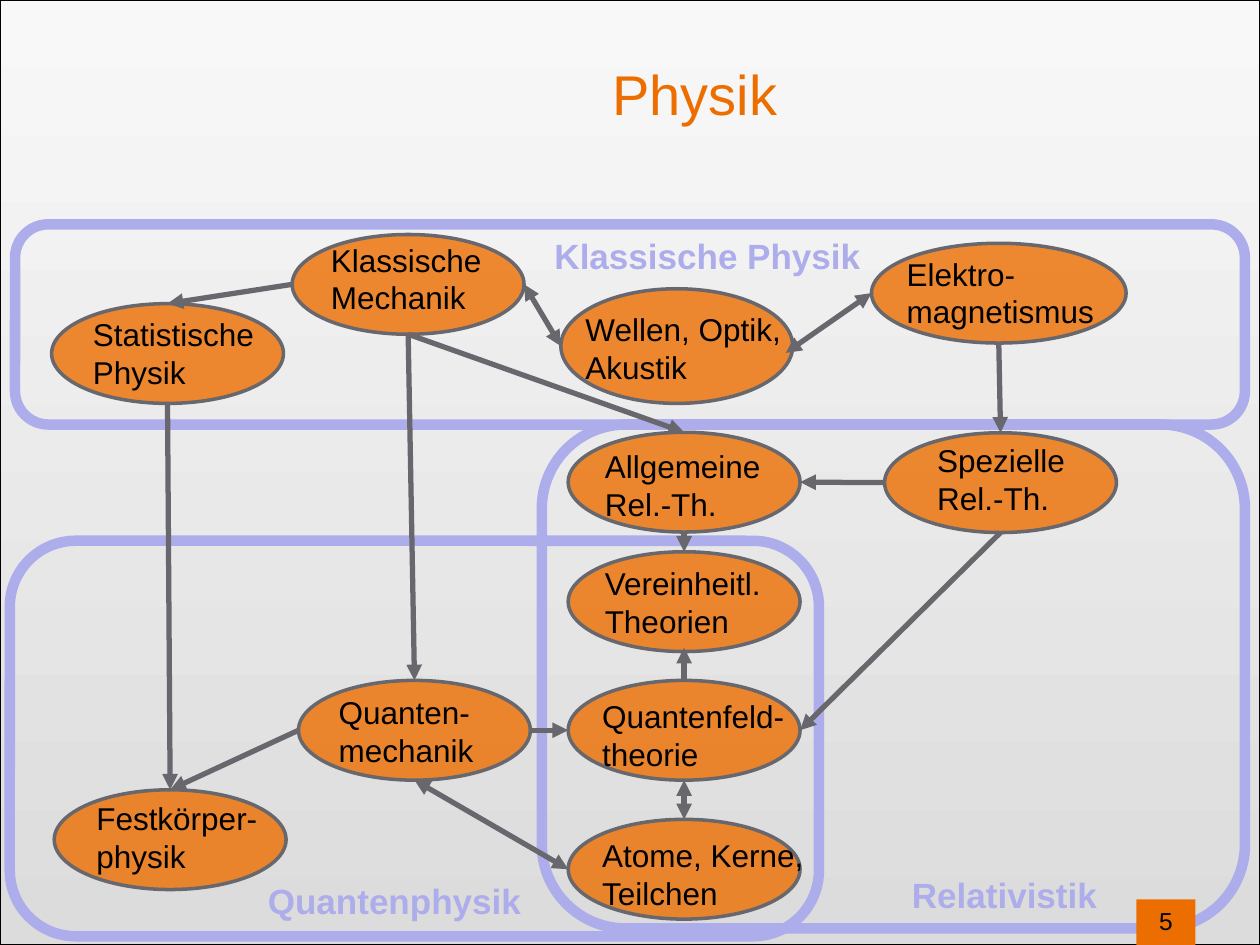
from lxml.etree import SubElement
from pptx import Presentation
from pptx.dml.color import RGBColor
from pptx.enum.shapes import MSO_CONNECTOR, MSO_SHAPE
from pptx.enum.text import MSO_ANCHOR, MSO_AUTO_SIZE, PP_ALIGN
from pptx.oxml.ns import qn
from pptx.util import Pt

COLORS = {"orange": "ED6E00", "node": "EC6E00", "gray": "68676D", "lilac": "ADADEB",
          "black": "000000", "light": "F8F8F8", "dark": "DCDCDC"}

# Where an arrow may touch a node, as shares of its width and height
SIDES = {"top": (0.5, 0), "left": (0, 0.5), "bottom": (0.5, 1), "right": (1, 0.5),
         "low": (0.5, 0.96), "corner": (0.97, 0.56)}

WIDE, HIGH = 132.5, 57
MID = 324.7  # left edge of the middle column

# Ellipse (left, top, width, height), label (left, top, width), label lines
NODES = {
    "mech": ((167, 134, WIDE, HIGH), (182, 134, 106.5), ("Klassische", "Mechanik")),
    "stat": ((29.5, 173.5, WIDE, HIGH), (46, 176.5, 112.5), ("Statistische", "Physik")),
    "wave": ((320.5, 165, WIDE, 65.5), (327.5, 173.5, 132.5), ("Wellen, Optik,", "Akustik")),
    "elec": ((498, 139, 145.5, HIGH), (511, 142, 122.5), ("Elektro-", "magnetismus")),
    "grav": ((MID, 247, WIDE, HIGH), (338.5, 252, 104.5), ("Allgemeine", "Rel.-Th.")),
    "rel": ((505.5, 247.3, WIDE, HIGH), (528.5, 248.5, 93.5), ("Spezielle", "Rel.-Th.")),
    "quant": ((170.6, 388.8, WIDE, HIGH), (186.5, 392.5, 92), ("Quanten-", "mechanik")),
    "solid": ((31, 451.3, WIDE, HIGH), (48, 453, 107.5), ("Festkörper-", "physik")),
    "union": ((MID, 315.3, WIDE, HIGH), (338.5, 319, 104.5), ("Vereinheitl.", "Theorien")),
    "field": ((MID, 388.8, WIDE, HIGH), (337, 395, 119.5), ("Quantenfeld-", "theorie")),
    "atom": ((MID, 468.2, WIDE, HIGH), (337, 474, 130.5), ("Atome, Kerne,", "Teilchen")),
}

# Start node and side, end node and side, both ends pointed
ARROWS = [
    ("stat", "bottom", "solid", "top", False),
    ("quant", "left", "solid", "top", False),
    ("mech", "left", "stat", "top", False),
    ("mech", "bottom", "quant", "top", False),
    ("mech", "right", "wave", "left", True),
    ("elec", "left", "wave", "corner", True),
    ("elec", "bottom", "rel", "top", False),
    ("mech", "bottom", "grav", "top", False),
    ("grav", "bottom", "union", "top", False),
    ("rel", "left", "grav", "right", False),
    ("rel", "bottom", "field", "right", False),
    ("field", "top", "union", "low", False),
    ("atom", "top", "field", "bottom", True),
    ("quant", "bottom", "atom", "left", True),
    ("quant", "right", "field", "left", False),
]

# Frame box, then name and its box
AREAS = [
    ((5.6, 309, 462.4, 226), "Quantenphysik", (146, 499, 160.5, 31.5)),
    ((309.6, 242.6, 401.8, 288), "Relativistik", (514, 495.5, 121, 31.5)),
    ((8.6, 128.2, 702.8, 114.4), "Klassische Physik", (309.8, 130.5, 190.5, 31.5)),
]


def color(name):
    return RGBColor.from_string(COLORS[name])


def spot(node, side):
    """Give the point where an arrow touches a node."""
    (x, y, w, h), (fx, fy) = NODES[node][0], SIDES[side]
    return Pt(x + w * fx), Pt(y + h * fy)


class Sheet:
    """The slide being drawn and its style."""
    face = "Arial"

    def __init__(self, deck):
        self.slide = deck.slides.add_slide(deck.slide_layouts[5])
        self.shapes = self.slide.shapes

    def letter(self, frame, lines, size, tone="black", bold=False, align=PP_ALIGN.LEFT):
        """Set the lines of text and their style."""
        frame.text = "\n".join(lines)
        for para in frame.paragraphs:
            para.alignment = align
            font = para.font
            font.name, font.size, font.bold = self.face, Pt(size), bold
            font.color.rgb = color(tone)

    def shape(self, kind, box, fill=None, line=None, width=1):
        item = self.shapes.add_shape(kind, *map(Pt, box))
        item.shadow.inherit = False
        if fill:
            item.fill.solid()
            item.fill.fore_color.rgb = color(fill)
        else:
            item.fill.background()
        if line:
            item.line.color.rgb = color(line)
            item.line.width = Pt(width)
        else:
            item.line.fill.background()
        return item

    def ground(self, box):
        fill = self.shape(MSO_SHAPE.RECTANGLE, box, line="black", width=0.75).fill
        fill.gradient()
        fill.gradient_angle = 270
        for stop, tone in zip(fill.gradient_stops, ("light", "dark")):
            stop.color.rgb = color(tone)

    def node(self, box):
        item = self.shape(MSO_SHAPE.OVAL, box, "node", "gray", 2)
        tint = item.element.spPr.find(qn("a:solidFill"))[0]
        SubElement(tint, qn("a:alpha"), val="80000")

    def title(self, text, box):
        item = self.shapes.title
        item.left, item.top, item.width, item.height = map(Pt, box)
        item.text_frame.vertical_anchor = MSO_ANCHOR.MIDDLE
        self.letter(item.text_frame, [text], 32, "orange", align=PP_ALIGN.CENTER)
        self.shapes.element.append(item.element)  # in front of the ground

    def label(self, lines, box, size=18, **style):
        frame = self.shapes.add_textbox(*map(Pt, box)).text_frame
        frame.word_wrap = False
        frame.auto_size = MSO_AUTO_SIZE.SHAPE_TO_FIT_TEXT
        self.letter(frame, lines, size, **style)

    def arrow(self, start, end, both):
        item = self.shapes.add_connector(MSO_CONNECTOR.STRAIGHT, *start, *end)
        item.line.color.rgb = color("gray")
        item.line.width = Pt(3)
        props = item.element.spPr
        line = props.find(qn("a:ln"))
        if both:
            SubElement(line, qn("a:headEnd"), type="triangle")
        SubElement(line, qn("a:tailEnd"), type="triangle")
        SubElement(props, qn("a:effectLst"))

    def number(self, text, box):
        frame = self.shape(MSO_SHAPE.RECTANGLE, box, "orange").text_frame
        frame.vertical_anchor = MSO_ANCHOR.TOP
        self.letter(frame, [text], 14, align=PP_ALIGN.CENTER)


def main():
    deck = Presentation()
    deck.slide_width, deck.slide_height = Pt(720), Pt(540)
    sheet = Sheet(deck)
    sheet.ground((0, 0, 720, 540))
    for box, _, _ in AREAS:
        sheet.shape(MSO_SHAPE.ROUNDED_RECTANGLE, box, line="lilac", width=6)
    for box, _, _ in NODES.values():
        sheet.node(box)
    sheet.number("5", (649.4, 514, 33.8, 41))
    sheet.title("Physik", (150.5, 15, 493, 77))
    for _, place, lines in NODES.values():
        sheet.label(lines, (*place, 51))
    for first, out, last, into, both in ARROWS:
        sheet.arrow(spot(first, out), spot(last, into), both)
    for _, name, box in AREAS:
        sheet.label([name], box, 20, tone="lilac", bold=True)
    deck.save("out.pptx")


if __name__ == "__main__":
    main()
